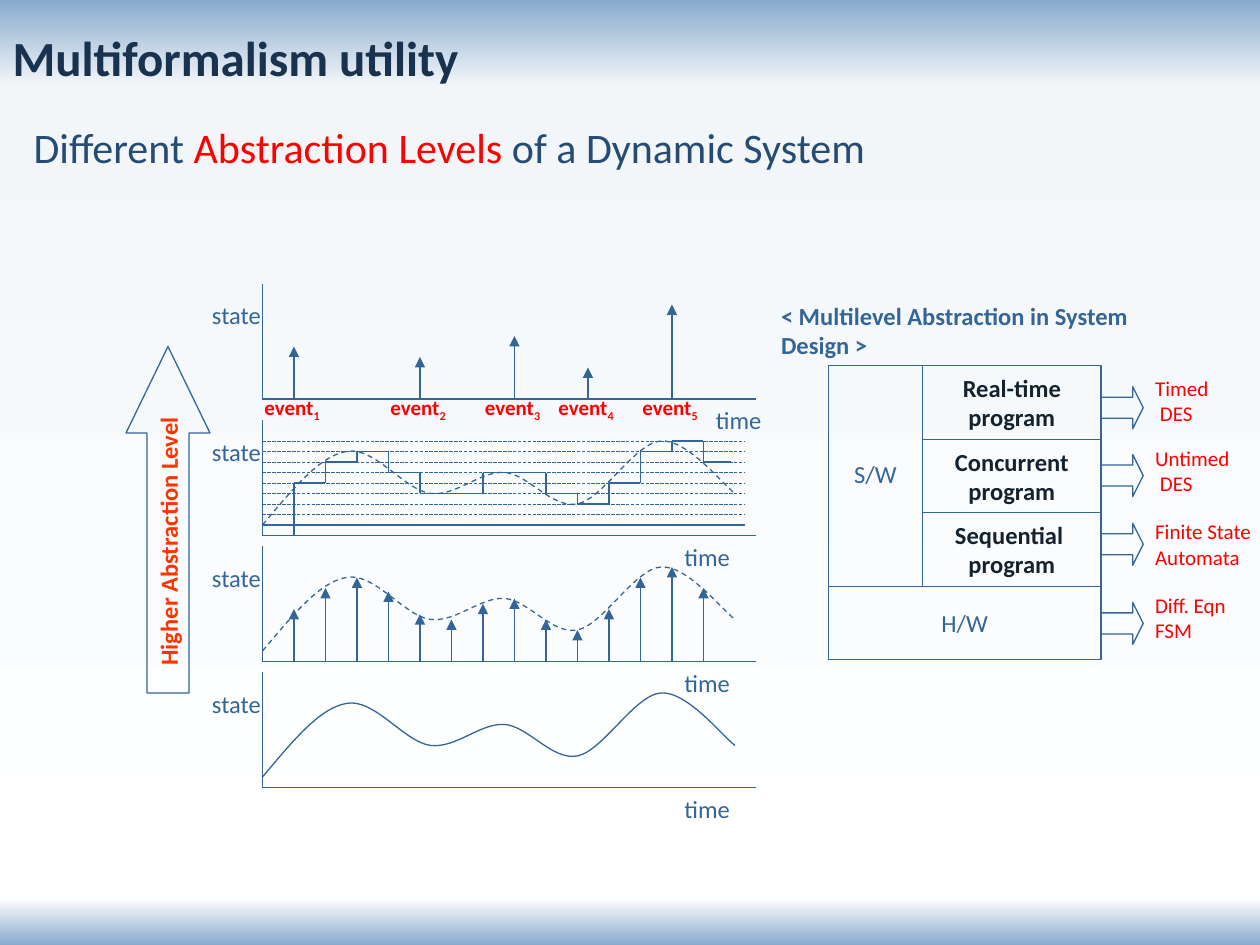
from copy import deepcopy
from itertools import pairwise
from lxml.etree import SubElement
from pptx import Presentation
from pptx.dml.color import RGBColor
from pptx.enum.dml import MSO_LINE
from pptx.enum.shapes import MSO_CONNECTOR, MSO_SHAPE
from pptx.enum.text import MSO_ANCHOR, MSO_AUTO_SIZE, PP_ALIGN
from pptx.oxml.ns import qn
from pptx.util import Pt

HUES = {"blue": "336599", "red": "FF0000", "flame": "FF3300", "ink": "142230",
        "navy": "19324D", "steel": "264C73", "sky": "89AACD", "mist": "F2F6F9",
        "white": "FFFFFF"}


def write(frame, text, size=14, hue="blue", bold=False, align=PP_ALIGN.LEFT,
          base=0, space=None):
    for i, part in enumerate(text.split("\n")):
        para = frame.add_paragraph() if i else frame.paragraphs[-1]
        para.alignment = align
        para.line_spacing = space
        run = para.add_run()
        run.text = part
        run.font.name = "Calibri"
        run.font.size = Pt(size)
        run.font.bold = bold
        run.font.color.rgb = RGBColor.from_string(HUES[hue])
        if base:
            run.font._element.set("baseline", str(base))


def draw(x1, y1, x2, y2, width=0.75, dash=None, head=False):
    line = shapes.add_connector(MSO_CONNECTOR.STRAIGHT, Pt(x1), Pt(y1), Pt(x2), Pt(y2))
    line.line.color.rgb = RGBColor.from_string(HUES["blue"])
    line.line.width = Pt(width)
    if dash:
        line.line.dash_style = dash
    if head:
        SubElement(line.line._get_or_add_ln(), qn("a:tailEnd"), type="triangle")
    SubElement(line._element.spPr, qn("a:effectLst"))


deck = Presentation()
deck.slide_width, deck.slide_height = Pt(720), Pt(540)
slide = deck.slides.add_slide(deck.slide_layouts[1])
shapes = slide.shapes

fill = slide.background.fill
fill.gradient()
fill.gradient_angle = 270
stops = fill._fill._gradFill.gsLst
for stop in list(stops)[2:]:
    stops.remove(stop)
for stop in list(stops):
    stops.append(deepcopy(stop))
for stop, pos, hue in zip(fill.gradient_stops, (0, 0.09, 0.95, 1),
                          ("sky", "mist", "white", "sky")):
    stop.position = pos
    stop.color.rgb = RGBColor.from_string(HUES[hue])

title = shapes.title
title.left, title.top, title.width, title.height = 0, 0, Pt(360), Pt(54)
title.text_frame.vertical_anchor = MSO_ANCHOR.MIDDLE
title.text_frame.margin_top = Pt(14.4)
write(title.text_frame, "Multiformalism utility", size=28, hue="navy", bold=True)

body = slide.placeholders[1]
body.left, body.top, body.width, body.height = Pt(12), Pt(66), Pt(696), Pt(444)
para = body.text_frame.paragraphs[0]
props = para._p.get_or_add_pPr()
props.set("marL", str(Pt(27)))
props.set("indent", str(-Pt(27)))
SubElement(props, qn("a:buNone"))
para.space_before = Pt(0)
for text, hue in (("Different ", "steel"), ("Abstraction Levels ", "red"),
                  ("of a Dynamic System", "steel")):
    write(body.text_frame, text, size=24, hue=hue)

labels = []
for base, left in ((450, 384), (378, 384), (306, 384), (228, 402)):
    draw(150, base, 150, base - 66)
    draw(150, base, 432, base)
    labels.append(((left, base, 42, 24.5), "time", {}))
    labels.append(((114, base - 60, 42.5, 24.5), "state", {}))

knots = [(150, 444), (166.3, 424.8), (182.2, 404.6), (198, 402), (213.8, 398.9),
         (231.1, 424.1), (246, 426), (260.6, 427.7), (274.3, 413.3), (288, 414),
         (301.7, 414.7), (315.4, 434.9), (330, 432), (344.6, 429.1), (362.9, 396.7),
         (378, 396), (393.1, 395.3), (413.3, 421.2), (420, 426)]
for lift in (0, 72, 144):
    pen = shapes.build_freeform(Pt(150), Pt(444 - lift))
    pen.add_line_segments([(Pt(x), Pt(y - lift)) for x, y in knots[1:]], close=False)
    curve = pen.convert_to_shape()
    sides = list(curve._element.iter(qn("a:lnTo")))
    track = sides[0].getparent()
    for k in range(0, len(sides), 3):
        bend = SubElement(track, qn("a:cubicBezTo"))
        for side in sides[k:k + 3]:
            bend.append(side[0])
            track.remove(side)
    curve.shadow.inherit = False
    curve.fill.background()
    curve.line.color.rgb = RGBColor.from_string(HUES["blue"])
    curve.line.width = Pt(0.75)
    if lift:
        curve.line.dash_style = MSO_LINE.DASH

tops = (348, 336, 330, 338, 351, 354, 345, 342, 354, 360, 348, 330, 324, 336)
for i, top in enumerate(tops):
    draw(168 + 18 * i, 378, 168 + 18 * i, top, head=True)

stairs = [(168, 276), (186, 264), (204, 258), (222, 270), (240, 282), (276, 270),
          (312, 282), (330, 288), (348, 276), (366, 258), (384, 252), (402, 264)]
corners = [(168, 306)]
for x, y in stairs:
    corners += [(x, corners[-1][1]), (x, y)]
corners = corners[1:] + [(418, 264)]
for start, end in pairwise(corners):
    draw(*start, *end)

draw(150, 300, 426, 300)
for y in range(294, 251, -6):
    draw(150, y, 426, y, width=0.25, dash=MSO_LINE.LONG_DASH)

events = ((168, 198, 144), (240, 204, 216), (294, 192, 270), (336, 210, 312), (384, 174, 360))
for x, top, left in events:
    draw(x, 228, x, top, head=True)
    labels.append(((left, 222, 46, 21.5), "event", {"size": 12, "hue": "red", "bold": True}))

for top, wide, text in ((211, 46, "Timed\n DES"), (251, 57, "Untimed\n DES"),
                        (293, 70, "Finite State\nAutomata"), (335, 55, "Diff. Eqn\nFSM")):
    labels.append(((653, top, wide, 36), text, {"size": 12, "hue": "red"}))
labels.append(((439.2, 168.5, 253.5, 24.5),
               "< Multilevel Abstraction in System Design >", {"bold": True}))
count = 0
for spot, text, style in labels:
    frame = shapes.add_textbox(*map(Pt, spot)).text_frame
    frame.auto_size = MSO_AUTO_SIZE.SHAPE_TO_FIT_TEXT
    frame.word_wrap = text.startswith("<")
    write(frame, text, **style)
    if text == "event":
        count += 1
        write(frame, str(count), base=-25000, **style)

dark = {"hue": "ink", "bold": True}
blocks = [(MSO_SHAPE.UP_ARROW, (72, 198, 48, 198), (0.5, 1.03),
           "Higher Abstraction Level", {"hue": "flame", "bold": True}),
          (MSO_SHAPE.RECTANGLE, (473.25, 209, 54, 126), (), "S/W", {"space": 0.9}),
          (MSO_SHAPE.RECTANGLE, (473.25, 335, 156, 42), (), "H/W", {})]
for i, name in enumerate(("Real-time", "Concurrent", "Sequential ")):
    blocks.append((MSO_SHAPE.RECTANGLE, (527.25, 209 + 42 * i, 102, 42), (),
                   name + "\nprogram", dark))
for top in (221, 259.75, 299, 344.25):
    blocks.append((MSO_SHAPE.RIGHT_ARROW, (629.25, top, 24, 24), (0.5, 0.25), "", {}))
for kind, spot, bends, text, style in blocks:
    block = shapes.add_shape(kind, *map(Pt, spot))
    block.shadow.inherit = False
    block.fill.background()
    block.line.color.rgb = RGBColor.from_string(HUES["blue"])
    block.line.width = Pt(0.75)
    for i, bend in enumerate(bends):
        block.adjustments[i] = bend
    if text:
        frame = block.text_frame
        frame.word_wrap = False
        frame.vertical_anchor = MSO_ANCHOR.MIDDLE
        write(frame, text, align=PP_ALIGN.CENTER, **style)
        if kind == MSO_SHAPE.UP_ARROW:
            frame._txBody.bodyPr.set("vert", "vert270")

deck.save("out.pptx")
